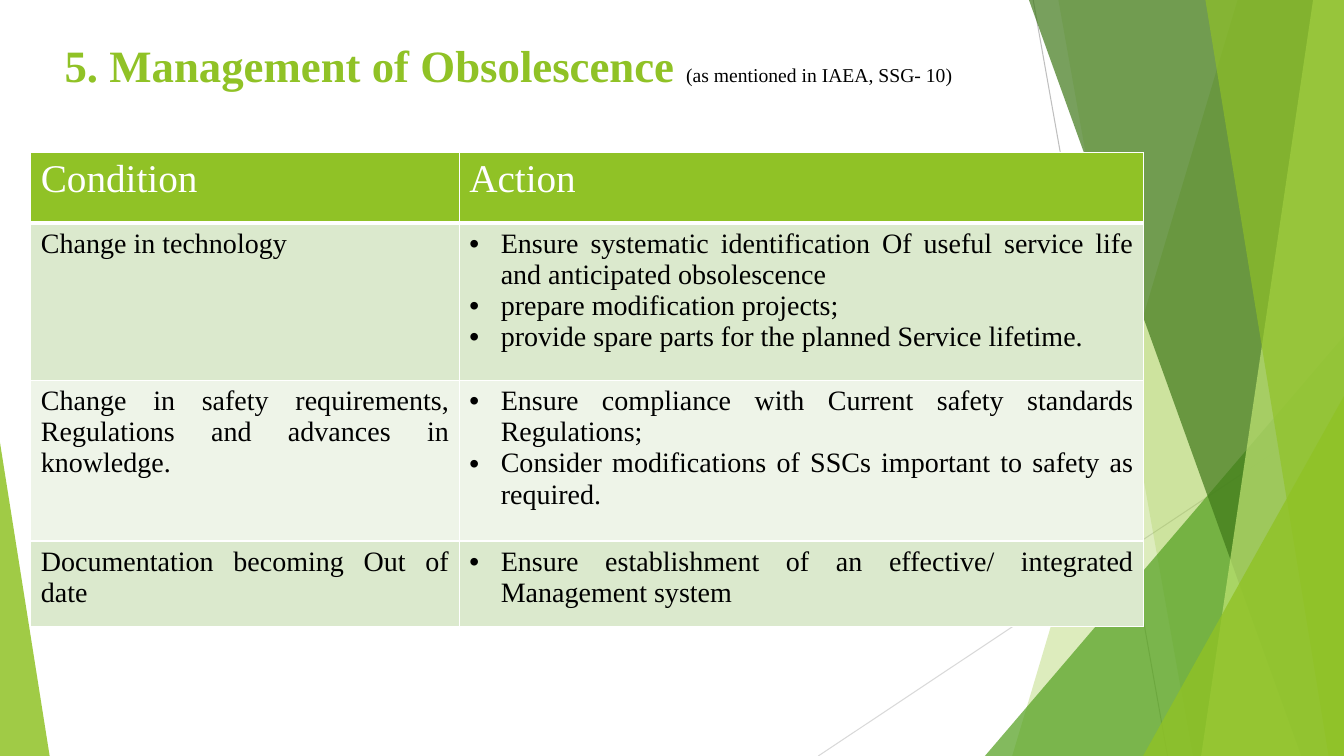
from dataclasses import dataclass

from lxml import etree
from pptx import Presentation
from pptx.dml.color import RGBColor
from pptx.enum.shapes import MSO_CONNECTOR
from pptx.enum.text import MSO_ANCHOR, PP_ALIGN
from pptx.oxml.ns import qn
from pptx.util import Pt

STRAIGHT = MSO_CONNECTOR.STRAIGHT
JUSTIFY = PP_ALIGN.JUSTIFY
TOP = MSO_ANCHOR.TOP


@dataclass(frozen=True)
class Theme:
    font: str = "Times New Roman"
    green: str = "90C226"
    mid_green: str = "54A021"
    dark_green: str = "3F7819"
    light_green: str = "C0E474"
    odd_row: str = "DBE9CD"
    even_row: str = "EEF4E8"
    gray: str = "BFBFBF"
    light_gray: str = "D9D9D9"
    white: str = "FFFFFF"
    black: str = "000000"
    title_size: int = 32
    note_size: int = 14
    header_size: int = 28
    body_size: int = 20


THEME = Theme()
WIDTH, HEIGHT = 960, 540

# Decoration, back to front: outline in points, colour, opacity in percent
FACETS = [
    ([(884, 0), (960, 0), (960, 540), (723, 540)], THEME.green, 30),
    ([(756, 0), (960, 0), (960, 540), (852, 540)], THEME.green, 20),
    ([(960, 240), (960, 540), (703.5, 540)], THEME.mid_green, 72),
    ([(735, 0), (960, 0), (960, 540), (929.5, 540)], THEME.dark_green, 70),
    ([(938, 0), (960, 0), (960, 540), (858, 540)], THEME.light_green, 70),
    ([(861, 0), (960, 0), (960, 540), (949, 540)], THEME.green, 65),
    ([(960, 283), (960, 540), (816.5, 540)], THEME.green, 80),
    ([(0, 316), (35.5, 540), (0, 540)], THEME.green, 85),
]

HEADERS = ["Condition", "Action"]
CONDITIONS = [
    ("Change in technology",
     ["Ensure systematic identification Of useful service life and anticipated obsolescence",
      "prepare modification projects;",
      "provide spare parts for the planned Service lifetime."]),
    ("Change in safety requirements, Regulations and advances in knowledge.",
     ["Ensure compliance with Current safety standards Regulations;",
      "Consider modifications of SSCs important to safety as required."]),
    ("Documentation becoming Out of date",
     ["Ensure establishment of an effective/ integrated Management system"]),
]
COLUMN_WIDTHS = [306, 489]
ROW_HEIGHTS = [50.5, 112.5, 114.5, 61]
BULLET_INDENT = 22.5


def rgb(color):
    return RGBColor.from_string(color)


def add_line(slide, start, end, color):
    line = slide.shapes.add_connector(STRAIGHT, *(Pt(value) for value in start + end))
    line.line.color.rgb = rgb(color)
    line.line.width = Pt(0.75)
    etree.SubElement(line._element.spPr, qn("a:effectLst"))


def add_facet(slide, points, color, opacity):
    corners = [(Pt(x), Pt(y)) for x, y in points]
    builder = slide.shapes.build_freeform(*corners[0])
    builder.add_line_segments(corners[1:], close=True)
    facet = builder.convert_to_shape()
    facet.shadow.inherit = False
    facet.line.fill.background()
    facet.fill.solid()
    facet.fill.fore_color.rgb = rgb(color)
    color_element = facet._element.spPr.find(".//" + qn("a:srgbClr"))
    etree.SubElement(color_element, qn("a:alpha"), val=str(opacity * 1000))


def add_title(slide, title, note):
    box = slide.shapes.add_textbox(Pt(39), Pt(20), Pt(790), Pt(74))
    frame = box.text_frame
    frame.word_wrap = True
    frame.margin_top = Pt(7)
    paragraph = frame.paragraphs[0]
    paragraph.font.name = THEME.font
    for text, size, color, bold in (
        (title, THEME.title_size, THEME.green, True),
        (note, THEME.note_size, THEME.black, False),
    ):
        run = paragraph.add_run()
        run.text = text
        run.font.name = THEME.font
        run.font.size = Pt(size)
        run.font.color.rgb = rgb(color)
        run.font.bold = bold


def set_borders(cell, bottom_width):
    properties = cell._tc.get_or_add_tcPr()
    for side, width in (("L", 1), ("R", 1), ("T", 1), ("B", bottom_width)):
        border = etree.SubElement(properties, qn("a:ln" + side), w=str(Pt(width)))
        fill = etree.SubElement(border, qn("a:solidFill"))
        etree.SubElement(fill, qn("a:srgbClr"), val=THEME.white)


def set_bullet(paragraph):
    properties = paragraph._p.get_or_add_pPr()
    properties.set("marL", str(Pt(BULLET_INDENT)))
    properties.set("indent", str(-Pt(BULLET_INDENT)))
    font = etree.Element(qn("a:buFont"), typeface="Arial")
    bullet = etree.Element(qn("a:buChar"), char="•")
    properties.insert(0, font)
    properties.insert(1, bullet)


def fill_cell(cell, lines, fill, size, color, bulleted=False, bottom_width=1):
    set_borders(cell, bottom_width)
    cell.fill.solid()
    cell.fill.fore_color.rgb = rgb(fill)
    cell.vertical_anchor = TOP
    cell.text = "\n".join(lines)
    for paragraph in cell.text_frame.paragraphs:
        paragraph.alignment = JUSTIFY
        paragraph.font.name = THEME.font
        paragraph.font.size = Pt(size)
        paragraph.font.bold = False
        paragraph.font.color.rgb = rgb(color)
        if bulleted:
            set_bullet(paragraph)


def add_condition_table(slide):
    frame = slide.shapes.add_table(
        len(ROW_HEIGHTS), len(COLUMN_WIDTHS), Pt(22), Pt(109),
        Pt(sum(COLUMN_WIDTHS)), Pt(sum(ROW_HEIGHTS)))
    table = frame.table
    for column, width in zip(table.columns, COLUMN_WIDTHS):
        column.width = Pt(width)
    for row, height in zip(table.rows, ROW_HEIGHTS):
        row.height = Pt(height)

    for index, header in enumerate(HEADERS):
        fill_cell(table.cell(0, index), [header], THEME.green,
                  THEME.header_size, THEME.white, bottom_width=3)
    for index, (condition, actions) in enumerate(CONDITIONS, start=1):
        fill = THEME.odd_row if index % 2 else THEME.even_row
        fill_cell(table.cell(index, 0), [condition], fill, THEME.body_size, THEME.black)
        fill_cell(table.cell(index, 1), actions, fill, THEME.body_size, THEME.black,
                  bulleted=True)


def main():
    presentation = Presentation()
    presentation.slide_width = Pt(WIDTH)
    presentation.slide_height = Pt(HEIGHT)
    slide = presentation.slides.add_slide(presentation.slide_layouts[6])

    # Faceted background
    add_line(slide, (738, 0), (834, 540), THEME.gray)
    add_line(slide, (960, 290), (584.5, 540), THEME.light_gray)
    for points, color, opacity in FACETS:
        add_facet(slide, points, color, opacity)

    # Content
    add_title(slide, "5. Management of Obsolescence ", "(as mentioned in IAEA, SSG- 10)")
    add_condition_table(slide)

    presentation.save("out.pptx")


if __name__ == "__main__":
    main()
